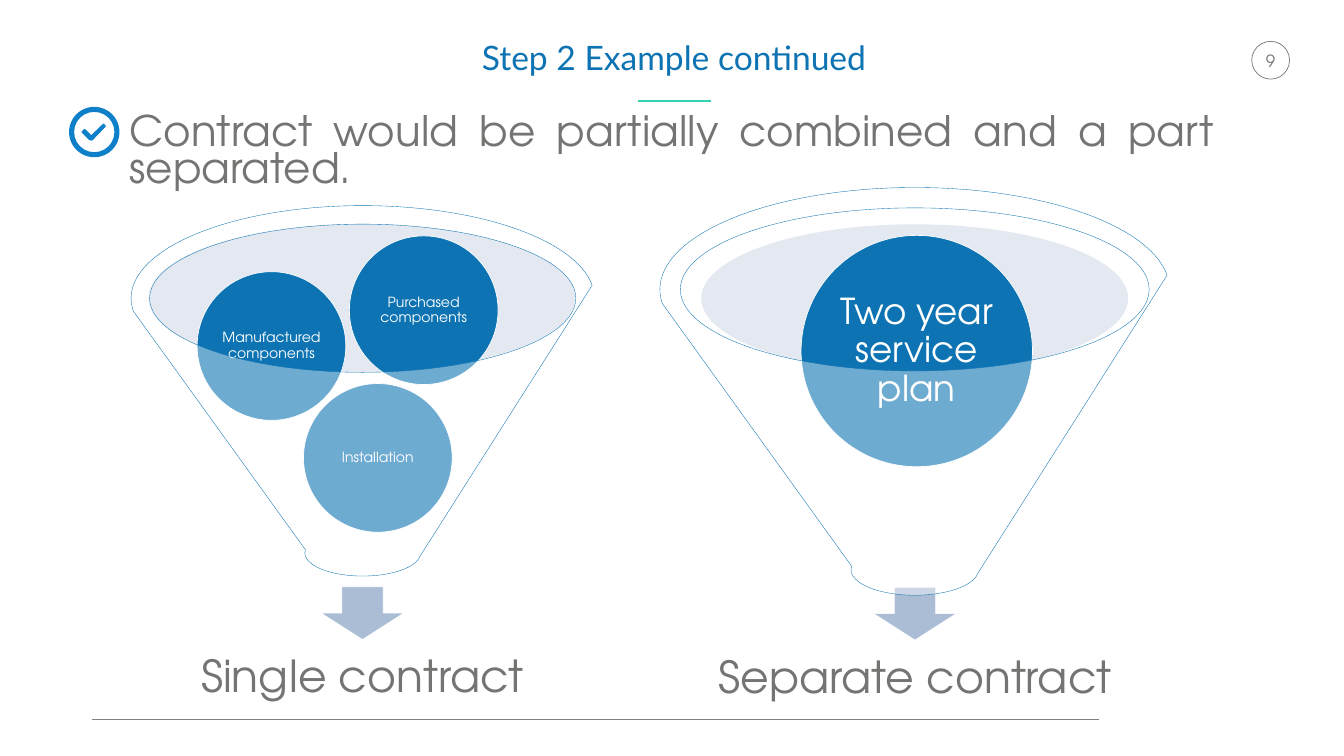
from lxml.etree import SubElement
from pptx import Presentation
from pptx.dml.color import RGBColor
from pptx.enum.shapes import MSO_CONNECTOR, MSO_SHAPE
from pptx.enum.text import MSO_ANCHOR, MSO_AUTO_SIZE, PP_ALIGN
from pptx.oxml.ns import qn
from pptx.util import Pt

EMU_PER_PX = 9144
BLUE = RGBColor(0x0D, 0x73, 0xB2)
ICON_BLUE = RGBColor(0x0E, 0x80, 0xC9)
PALE_BLUE = RGBColor(0xBD, 0xC9, 0xDD)
ARROW_BLUE = RGBColor(0xAB, 0xBC, 0xD5)
TEAL = RGBColor(0x33, 0xD1, 0xAD)
TEXT_GRAY = RGBColor(0x73, 0x75, 0x72)
RULE_GRAY = RGBColor(0x80, 0x80, 0x80)
WHITE = RGBColor(0xFF, 0xFF, 0xFF)
BODY_FONT = "TeX Gyre Adventor"
TITLE_FONT = "Lato"
CHECK_POINTS = [
    (163, 264), (162, 261), (167, 256), (170, 257), (181, 268), (203, 247),
    (206, 245), (210, 250), (209, 252), (184, 278), (181, 279), (177, 278),
]


def px(*lengths):
    """Turn px lengths into a list of EMU lengths."""
    return [round(length * EMU_PER_PX) for length in lengths]


def write_text(shape, text, size, color=TEXT_GRAY, font=BODY_FONT, align=PP_ALIGN.CENTER,
               anchor=MSO_ANCHOR.MIDDLE, spacing=0.9, insets=(20, 10), wrap=True):
    """Write one formatted paragraph into a shape."""
    frame = shape.text_frame
    frame.auto_size = MSO_AUTO_SIZE.NONE
    frame.word_wrap = wrap
    frame.vertical_anchor = anchor
    frame.margin_left, frame.margin_top = px(*insets)
    frame.margin_right, frame.margin_bottom = px(*insets)
    paragraph = frame.paragraphs[0]
    paragraph.text = text
    paragraph.alignment = align
    paragraph.line_spacing = spacing
    paragraph.space_before = Pt(0)
    run_font = paragraph.runs[0].font
    run_font.name = font
    run_font.size = Pt(size)
    run_font.color.rgb = color
    return paragraph


def format_shape(shape, fill=None, line=None, width=1, opacity=None):
    """Set the fill, outline and opacity of a shape."""
    shape.shadow.inherit = False
    if fill is None:
        shape.fill.background()
    else:
        shape.fill.solid()
        shape.fill.fore_color.rgb = fill
    if opacity is not None:
        color = shape.fill._xPr.find(qn("a:solidFill"))[0]
        SubElement(color, qn("a:alpha"), val=str(opacity * 1000))
    if line is None:
        shape.line.fill.background()
    else:
        shape.line.color.rgb = line
        shape.line.width = Pt(width)


def add_preset(slide, kind, box, **style):
    """Add a formatted preset shape."""
    shape = slide.shapes.add_shape(kind, *px(*box))
    format_shape(shape, **style)
    return shape


def add_line(slide, ends, color, width):
    """Add a straight line without a shadow."""
    line = slide.shapes.add_connector(MSO_CONNECTOR.STRAIGHT, *px(*ends))
    line.line.color.rgb = color
    line.line.width = Pt(width)
    SubElement(line._element.spPr, qn("a:effectLst"))


def add_label(slide, box, text, size, **style):
    """Add a text box with one formatted paragraph."""
    write_text(slide.shapes.add_textbox(*px(*box)), text, size, **style)


def fill_placeholder(placeholder, box, text, size, **style):
    """Move a placeholder and write its text without a bullet."""
    placeholder.left, placeholder.top, placeholder.width, placeholder.height = px(*box)
    paragraph = write_text(placeholder, text, size, anchor=MSO_ANCHOR.TOP, **style)
    properties = paragraph._p.get_or_add_pPr()
    properties.set("marL", "0")
    properties.set("indent", "0")
    SubElement(properties, qn("a:buNone"))


def add_check_icon(slide):
    """Draw a check mark in a ring."""
    ring = add_preset(slide, MSO_SHAPE.DONUT, (137, 212, 100, 100), fill=ICON_BLUE)
    ring.adjustments[0] = 0.1
    builder = slide.shapes.build_freeform(*CHECK_POINTS[0], scale=EMU_PER_PX)
    builder.add_line_segments(CHECK_POINTS[1:], close=True)
    format_shape(builder.convert_to_shape(), fill=ICON_BLUE)


def add_funnel(slide, rim, arrow, funnel, label_box, label, balls, diameter, size, inset):
    """Draw a funnel with its balls, arrow and result label."""
    add_preset(slide, MSO_SHAPE.OVAL, rim, fill=PALE_BLUE, opacity=40)
    add_preset(slide, MSO_SHAPE.DOWN_ARROW, arrow, fill=ARROW_BLUE, line=WHITE)
    add_label(slide, label_box, label, 63, insets=(49, 49))
    for left, top, text in balls:
        ball = add_preset(slide, MSO_SHAPE.OVAL, (left, top, diameter, diameter),
                          fill=BLUE, line=WHITE)
        write_text(ball, text, size, color=WHITE, insets=(inset, inset))
    add_preset(slide, MSO_SHAPE.FUNNEL, funnel, fill=WHITE, opacity=40, line=BLUE, width=0.5)


def main():
    """Build and save the slide."""
    presentation = Presentation()
    presentation.slide_width, presentation.slide_height = px(2666, 1500)
    slide = presentation.slides.add_slide(presentation.slide_layouts[1])
    title, body = slide.placeholders

    add_line(slide, (183, 1428, 2180, 1428), RULE_GRAY, 1)
    add_label(slide, (2480, 90, 81, 61), "9", 24, anchor=MSO_ANCHOR.TOP, spacing=1.0, wrap=False)
    add_preset(slide, MSO_SHAPE.OVAL, (2483, 82, 75, 75), line=TEXT_GRAY)
    add_line(slide, (1266, 200, 1410, 200), TEAL, 3)

    fill_placeholder(title, (349, 73, 1976, 107), "Step 2 Example continued", 48,
                     color=BLUE, font=TITLE_FONT)
    fill_placeholder(body, (237, 223, 2191, 885),
                     "Contract would be partially combined and a part separated.", 60,
                     align=PP_ALIGN.JUSTIFY, spacing=Pt(53))
    add_check_icon(slide)

    add_funnel(slide, rim=(294, 444, 847, 294), arrow=(637, 1164, 164, 105),
               funnel=(260, 408, 919, 735), label_box=(325, 1248, 788, 197),
               label="Single contract", diameter=295, size=20, inset=3,
               balls=[(602, 761, "Installation"),
                      (391, 539, "Manufactured components"),
                      (693, 468, "Purchased components")])
    add_funnel(slide, rim=(1391, 445, 847, 294), arrow=(1733, 1165, 164, 105),
               funnel=(1309, 372, 1011, 809), label_box=(1307, 1249, 1017, 197),
               label="Separate contract", diameter=459, size=51, inset=7,
               balls=[(1589, 467, "Two year service plan")])
    presentation.save("out.pptx")


if __name__ == "__main__":
    main()
